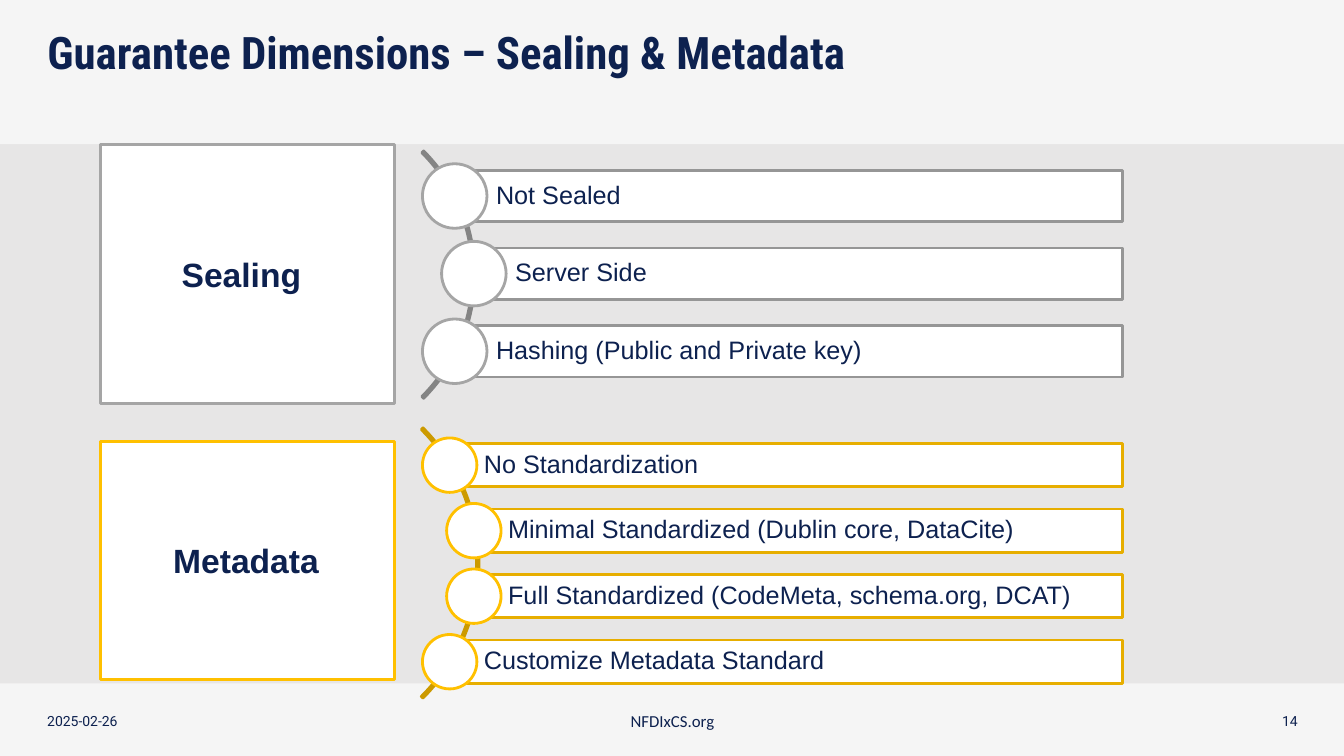
from lxml import etree
from pptx import Presentation
from pptx.dml.color import RGBColor
from pptx.enum.shapes import MSO_SHAPE
from pptx.enum.text import MSO_ANCHOR, MSO_AUTO_SIZE, PP_ALIGN
from pptx.oxml.ns import qn
from pptx.util import Inches, Pt

COLORS = {
    "navy": "0D214F", "white": "FFFFFF", "background": "E7E6E6",
    "gray": "A5A5A5", "gray_bar": "969696", "gray_arc": "848484",
    "gold": "FFC000", "gold_bar": "E7AE00", "gold_arc": "CC9A00",
}


def put_text(sp, text, size, font="Arial", bold=False, align=PP_ALIGN.LEFT,
             anchor=MSO_ANCHOR.MIDDLE, left=0.1, right=0.1, spacing=1.0):
    tf = sp.text_frame
    tf.word_wrap = True
    tf.auto_size = MSO_AUTO_SIZE.NONE
    tf.vertical_anchor = anchor
    tf.margin_left, tf.margin_right = Inches(left), Inches(right)
    tf.margin_top = tf.margin_bottom = Inches(0.05)
    p = tf.paragraphs[0]
    p.alignment = align
    p.line_spacing = spacing
    r = p.add_run()
    r.text = text
    r.font.name, r.font.size, r.font.bold = font, Pt(size), bold
    r.font.color.rgb = RGBColor.from_string(COLORS["navy"])


def add_outlined(kind, x, y, w, h, fill=None, line=None):
    sp = s.shapes.add_shape(kind, Inches(x), Inches(y), Inches(w), Inches(h))
    sp.shadow.inherit = False
    if fill:
        sp.fill.solid()
        sp.fill.fore_color.rgb = RGBColor.from_string(COLORS[fill])
    else:
        sp.fill.background()
    if line:
        sp.line.color.rgb = RGBColor.from_string(COLORS[line])
        sp.line.width = Pt(2)
    else:
        sp.line.fill.background()
    return sp


prs = Presentation()
prs.slide_width, prs.slide_height = Inches(13.33), Inches(7.5)
s = prs.slides.add_slide(prs.slide_layouts[5])
s.background.fill.solid()
s.background.fill.fore_color.rgb = RGBColor.from_string(COLORS["background"])

# Translucent header and footer bands
for y, h in [(0, 1.43), (6.78, 0.72)]:
    band = add_outlined(MSO_SHAPE.RECTANGLE, 0, y, 13.33, h, fill="white")
    color = band.fill._xPr.find(qn("a:solidFill"))[0]
    etree.SubElement(color, qn("a:alpha")).set("val", "60000")

# Title, brought in front of the bands
title = s.shapes.title
title.left, title.top = Inches(0.37), Inches(0.26)
title.width, title.height = Inches(12.6), Inches(1.17)
put_text(title, "Guarantee Dimensions – Sealing & Metadata", 32,
         font="Roboto Condensed", bold=True, anchor=MSO_ANCHOR.TOP, spacing=0.9)
s.shapes.element.append(title.element)

# Footer
for text, x, w, size, font, align in [
    ("2025-02-26", 0.37, 3, 10, "Roboto", PP_ALIGN.LEFT),
    ("NFDIxCS.org", 3.74, 5.86, 12, "Calibri", PP_ALIGN.CENTER),
    ("14", 9.97, 3, 10, "Roboto", PP_ALIGN.RIGHT),
]:
    footer = s.shapes.add_textbox(Inches(x), Inches(6.95), Inches(w), Inches(0.4))
    put_text(footer, text, size, font=font, align=align)

# Each dimension: a heading box, an arc and a row of bars with circles
BAR_RIGHT = 11.13
dimensions = [
    dict(name="Sealing", color="gray", box=(1.43, 2.57), heading_right=0.22,
         arc=(1.24, 0.99, 3.47), thickness=0.007,
         top=1.69, pitch=0.77, bar_h=0.51, circle=0.64, inset=0.41,
         bars=[(4.51, "Not Sealed"), (4.7, "Server Side"),
               (4.51, "Hashing (Public and Private key)")]),
    dict(name="Metadata", color="gold", box=(4.38, 2.36), heading_right=0.13,
         arc=(0.96, 3.69, 3.79), thickness=0.006,
         top=4.4, pitch=0.65, bar_h=0.43, circle=0.54, inset=0.34,
         bars=[(4.46, "No Standardization"),
               (4.7, "Minimal Standardized (Dublin core, DataCite)"),
               (4.7, "Full Standardized (CodeMeta, schema.org, DCAT)"),
               (4.46, "Customize Metadata Standard")]),
]
for d in dimensions:
    box_top, box_h = d["box"]
    box = add_outlined(MSO_SHAPE.RECTANGLE, 1, box_top, 2.91, box_h,
                       fill="white", line=d["color"])
    put_text(box, d["name"], 24, bold=True, align=PP_ALIGN.CENTER,
             right=d["heading_right"])

    x, y, size = d["arc"]
    arc = add_outlined(MSO_SHAPE.BLOCK_ARC, x, y, size, size, line=d["color"] + "_arc")
    for i, value in enumerate([189, 27, d["thickness"]]):
        arc.adjustments[i] = value

    for i, (x, text) in enumerate(d["bars"]):
        y = d["top"] + i * d["pitch"]
        bar = add_outlined(MSO_SHAPE.RECTANGLE, x, y, BAR_RIGHT - x, d["bar_h"],
                           fill="white", line=d["color"] + "_bar")
        put_text(bar, text, 18, left=d["inset"], right=0.05, spacing=0.9)
        radius = d["circle"] / 2
        add_outlined(MSO_SHAPE.OVAL, x - radius, y + d["bar_h"] / 2 - radius,
                     d["circle"], d["circle"], fill="white", line=d["color"])

prs.save("out.pptx")
